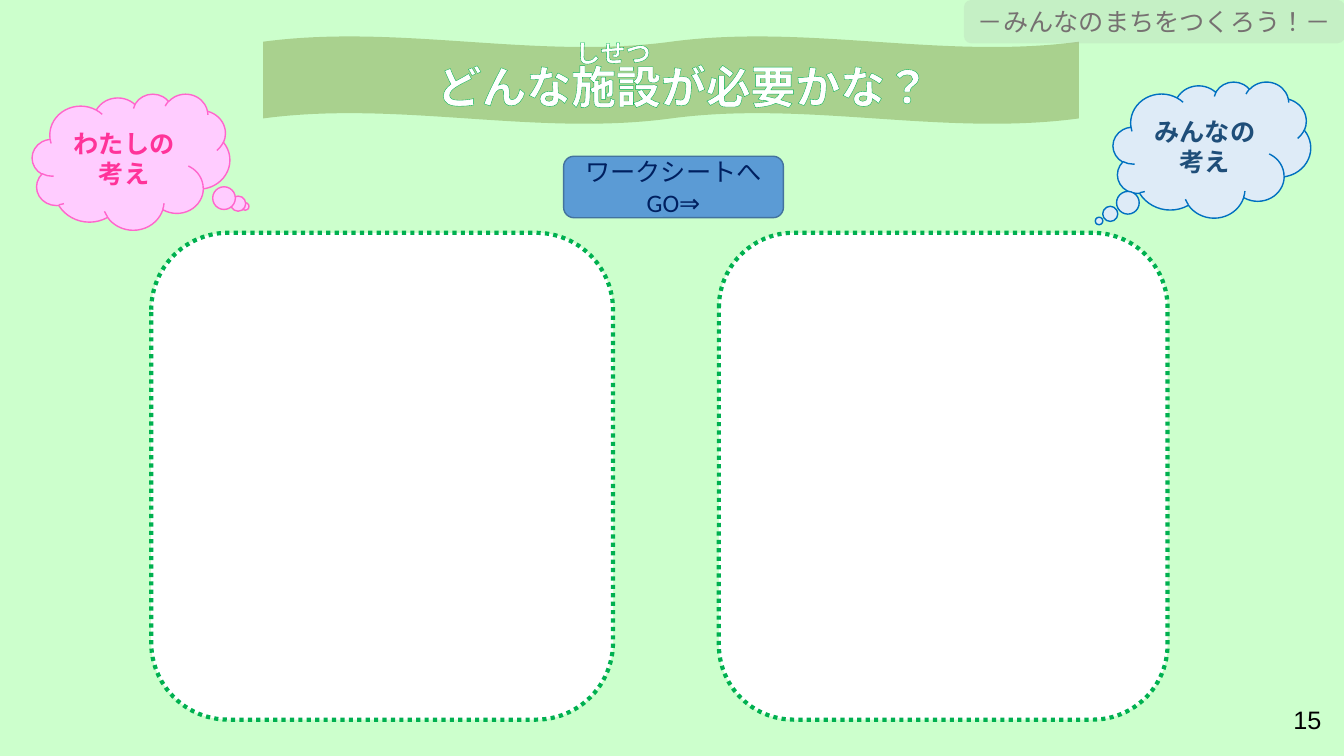
"""Build the slide where pupils collect ideas about facilities their town needs."""
from lxml.etree import SubElement
from pptx import Presentation
from pptx.dml.color import RGBColor
from pptx.enum.dml import MSO_LINE
from pptx.enum.lang import MSO_LANGUAGE_ID
from pptx.enum.shapes import MSO_SHAPE
from pptx.enum.text import MSO_ANCHOR, MSO_AUTO_SIZE, PP_ALIGN
from pptx.oxml import parse_xml
from pptx.oxml.ns import nsdecls, qn
from pptx.util import Inches, Pt

JAPANESE_FONT = "Noto Sans CJK JP"
GREEN = "00B050"
PANEL_TOP, PANEL_HEIGHT = 2.31, 4.83
PANELS = [(1.5, 4.58), (7.13, 4.45)]
CLOUDS = [
    ("わたしの考え", (0.32, 0.93), (0.578, 0.328), "FFCCFF", "FF66CC", "FF3399"),
    ("みんなの考え", (11.04, 0.81), (-0.571, 0.524), "DEEBF7", "0070C0", "1F4E79"),
]
CLOUD_SIZE = (1.96, 1.35)
BUTTON = ("ワークシートへGO⇒", (5.59, 1.55, 2.18, 0.61))
PAGE_NUMBER = ("15", (12.73, 6.94, 0.6, 0.4))
BANNER = (2.61, 0.36, 8.09, 0.87)
TITLES = [
    ("どんな施設が必要かな？", (4.21, 0.4, 5.14, 0.9), 32),
    ("しせつ", (5.23, 0.31, 1.7, 0.42), 18),
]
UNIT_TAG = ("－みんなのまちをつくろう！－", (9.56, 0, 3.78, 0.43))


def paint(color, value):
    color.rgb = RGBColor.from_string(value)


def add_figure(shapes, kind, area, fill, line=None, width=1):
    figure = shapes.add_shape(kind, *map(Inches, area))
    figure.shadow.inherit = False
    figure.fill.solid()
    paint(figure.fill.fore_color, fill)
    if line:
        paint(figure.line.color, line)
        figure.line.width = Pt(width)
    else:
        figure.line.fill.background()
    return figure


def write(box, text, color, size=18, font=JAPANESE_FONT, bold=False,
          align=PP_ALIGN.CENTER, anchor=MSO_ANCHOR.MIDDLE):
    frame = box.text_frame
    frame.word_wrap = True
    frame.vertical_anchor = anchor
    para = frame.paragraphs[0]
    para.alignment = align
    span = para.add_run()
    span.text = text
    span.font.name = font
    span.font.size = Pt(size)
    span.font.bold = bold
    span.font.language_id = MSO_LANGUAGE_ID.JAPANESE
    paint(span.font.color, color)
    properties = span.font._element
    SubElement(properties, qn("a:ea")).set("typeface", JAPANESE_FONT)
    return properties


def outline_text(properties, color, width):
    properties.insert(0, parse_xml(
        f'<a:ln {nsdecls("a")} w="{Pt(width)}"><a:solidFill>'
        f'<a:srgbClr val="{color}"/></a:solidFill></a:ln>'))


def main():
    deck = Presentation()
    deck.slide_width, deck.slide_height = Inches(13.33), Inches(7.5)
    page = deck.slides.add_slide(deck.slide_layouts[6])
    page.background.fill.solid()
    paint(page.background.fill.fore_color, "CCFFCC")
    shapes = page.shapes

    for left, width in PANELS:
        panel = add_figure(shapes, MSO_SHAPE.ROUNDED_RECTANGLE,
                           (left, PANEL_TOP, width, PANEL_HEIGHT), "FFFFFF", GREEN, 3)
        panel.line.dash_style = MSO_LINE.ROUND_DOT

    for text, place, tail, fill, line, color in CLOUDS:
        cloud = add_figure(shapes, MSO_SHAPE.CLOUD_CALLOUT, place + CLOUD_SIZE, fill, line)
        cloud.adjustments[0], cloud.adjustments[1] = tail
        write(cloud, text, color, bold=True)

    text, area = BUTTON
    button = add_figure(shapes, MSO_SHAPE.ROUNDED_RECTANGLE, area, "5B9BD5", "43739E")
    write(button, text, "002060", font="Calibri")

    text, area = PAGE_NUMBER
    number = shapes.add_textbox(*map(Inches, area))
    write(number, text, "000000", font="Arial", align=PP_ALIGN.LEFT, anchor=MSO_ANCHOR.TOP)
    number.text_frame.auto_size = MSO_AUTO_SIZE.SHAPE_TO_FIT_TEXT

    heading = shapes.add_group_shape()
    add_figure(heading.shapes, MSO_SHAPE.DOUBLE_WAVE, BANNER, "A9D18E")
    for text, area, size in TITLES:
        title = heading.shapes.add_textbox(*map(Inches, area))
        outline_text(write(title, text, "FFFFFF", size, bold=True), GREEN, 0.8)

    text, area = UNIT_TAG
    tag = add_figure(shapes, MSO_SHAPE.ROUNDED_RECTANGLE, area, "A6A6A6")
    tint = tag._element.spPr.find(qn("a:solidFill")).find(qn("a:srgbClr"))
    SubElement(tint, qn("a:alpha")).set("val", "16000")
    write(tag, text, "767171")

    deck.save("out.pptx")


if __name__ == "__main__":
    main()
